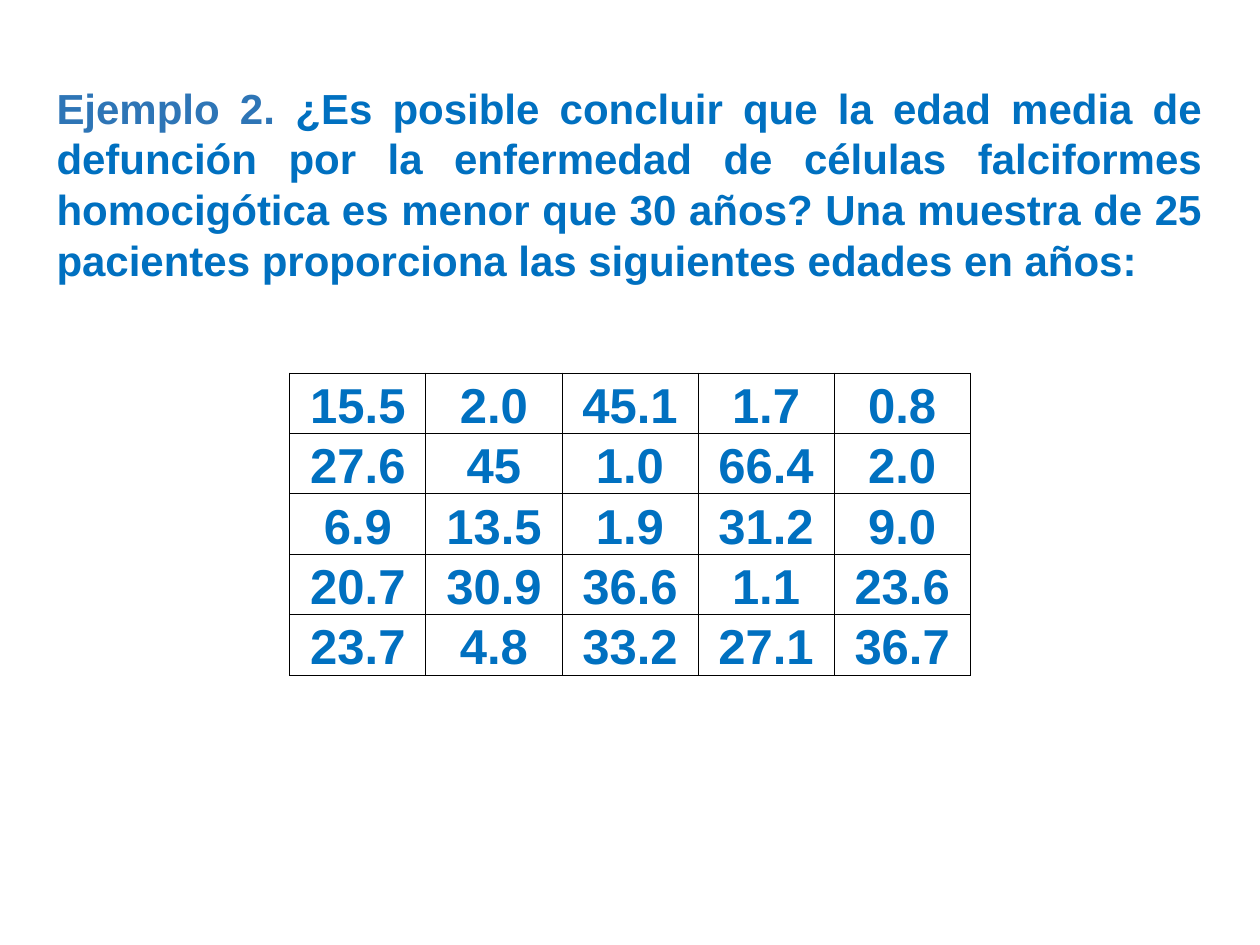
"""Build the slide with the sickle-cell example and its table of ages."""
from lxml import etree
from pptx import Presentation
from pptx.dml.color import RGBColor
from pptx.enum.text import MSO_ANCHOR, PP_ALIGN
from pptx.oxml.ns import qn
from pptx.util import Inches, Pt

JUSTIFY, CENTER, BOTTOM = PP_ALIGN.JUSTIFY, PP_ALIGN.CENTER, MSO_ANCHOR.BOTTOM

QUESTION = [
    ("Ejemplo 2. ", "label"),
    ("¿Es posible concluir que la edad media de defunción por la enfermedad "
     "de células falciformes homocigótica es menor que 30 años? Una muestra "
     "de 25 pacientes proporciona las siguientes edades en años:", "body"),
]
AGES = [
    ("15.5", "2.0", "45.1", "1.7", "0.8"),
    ("27.6", "45", "1.0", "66.4", "2.0"),
    ("6.9", "13.5", "1.9", "31.2", "9.0"),
    ("20.7", "30.9", "36.6", "1.1", "23.6"),
    ("23.7", "4.8", "33.2", "27.1", "36.7"),
]
THEME = {
    "font": "Arial", "label": "2E75B6", "body": "0070C0", "border": "000000",
    "question_size": 24, "line_size": 29, "age_size": 28, "border_width": 0.5,
}
WIDTH, HEIGHT = 10, 7.5
QUESTION_BOX = (0.35, 0.6, 9.29, 1.72)
TABLE_TOP, COL_W, ROW_H = 2.96, 1.08, 0.48
CELL_FORMAT = {
    "margin_left": Inches(0.01), "margin_right": Inches(0.01),
    "margin_top": Inches(0.01), "margin_bottom": 0,
    "vertical_anchor": BOTTOM,
}


def add_run(p, text, size, color):
    r = p.add_run()
    r.text = text
    font = {"name": THEME["font"], "size": Pt(size), "bold": True}
    for name, value in font.items():
        setattr(r.font, name, value)
    r.font.color.rgb = RGBColor.from_string(THEME[color])


def add_borders(cell):
    tc_pr = cell._tc.get_or_add_tcPr()
    for i, side in enumerate(("a:lnL", "a:lnR", "a:lnT", "a:lnB")):
        ln = etree.Element(qn(side), w=str(Pt(THEME["border_width"])))
        fill = etree.SubElement(ln, qn("a:solidFill"))
        etree.SubElement(fill, qn("a:srgbClr"), val=THEME["border"])
        tc_pr.insert(i, ln)


def add_question(s):
    tf = s.shapes.add_textbox(*map(Inches, QUESTION_BOX)).text_frame
    tf.word_wrap = True
    p = tf.paragraphs[0]
    p.alignment = JUSTIFY
    p.line_spacing = Pt(THEME["line_size"])
    for text, color in QUESTION:
        add_run(p, text, THEME["question_size"], color)


def add_ages(s):
    rows, cols = len(AGES), len(AGES[0])
    width = cols * COL_W
    box = ((WIDTH - width) / 2, TABLE_TOP, width, rows * ROW_H)
    table = s.shapes.add_table(rows, cols, *map(Inches, box)).table
    table.first_row = table.horz_banding = False
    for i, row in enumerate(AGES):
        for j, age in enumerate(row):
            cell = table.cell(i, j)
            for name, value in CELL_FORMAT.items():
                setattr(cell, name, value)
            cell.fill.background()
            add_borders(cell)
            p = cell.text_frame.paragraphs[0]
            p.alignment = CENTER
            add_run(p, age, THEME["age_size"], "body")


def main():
    prs = Presentation()
    prs.slide_width, prs.slide_height = Inches(WIDTH), Inches(HEIGHT)
    s = prs.slides.add_slide(prs.slide_layouts[6])
    add_question(s)
    add_ages(s)
    prs.save("out.pptx")


if __name__ == "__main__":
    main()
